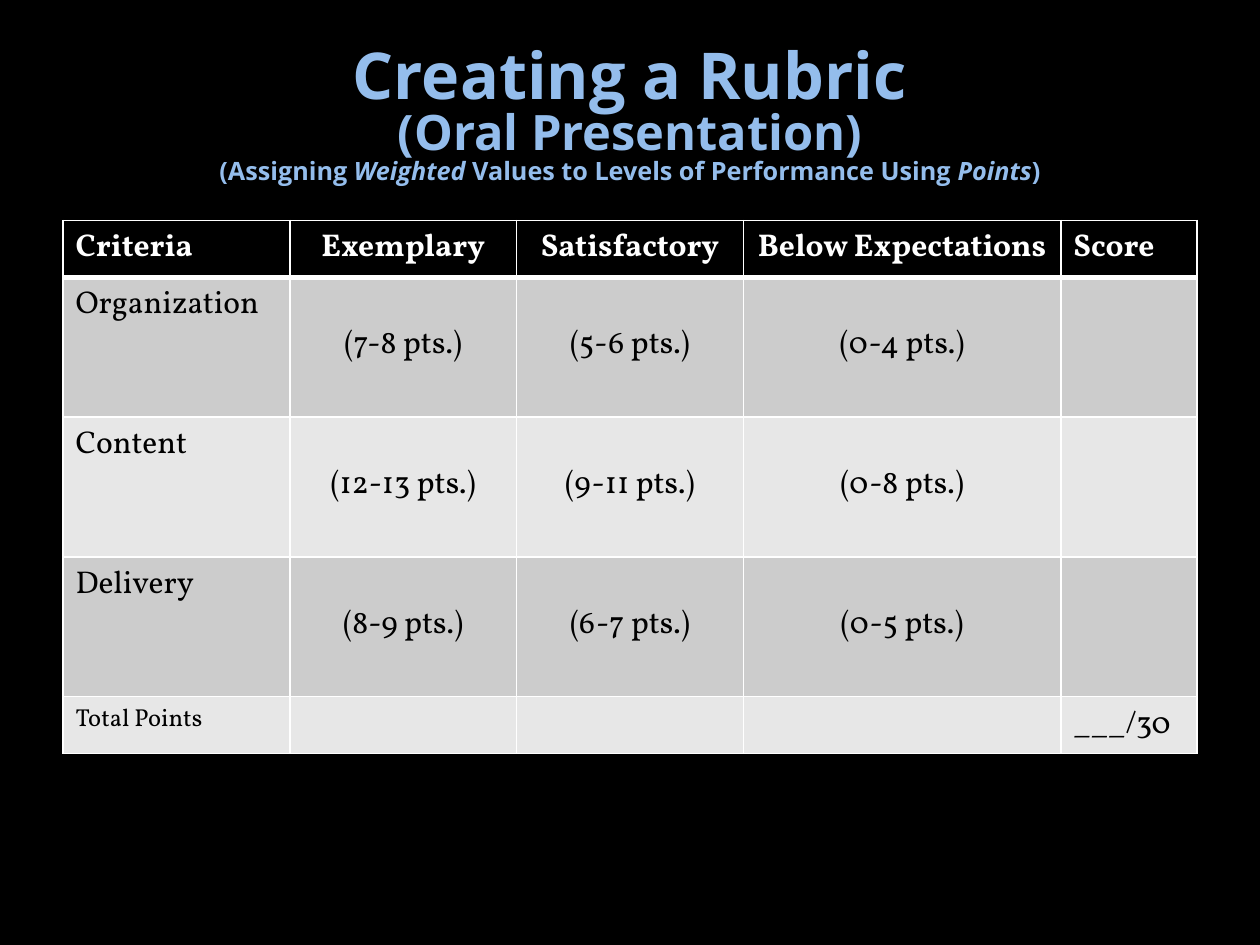
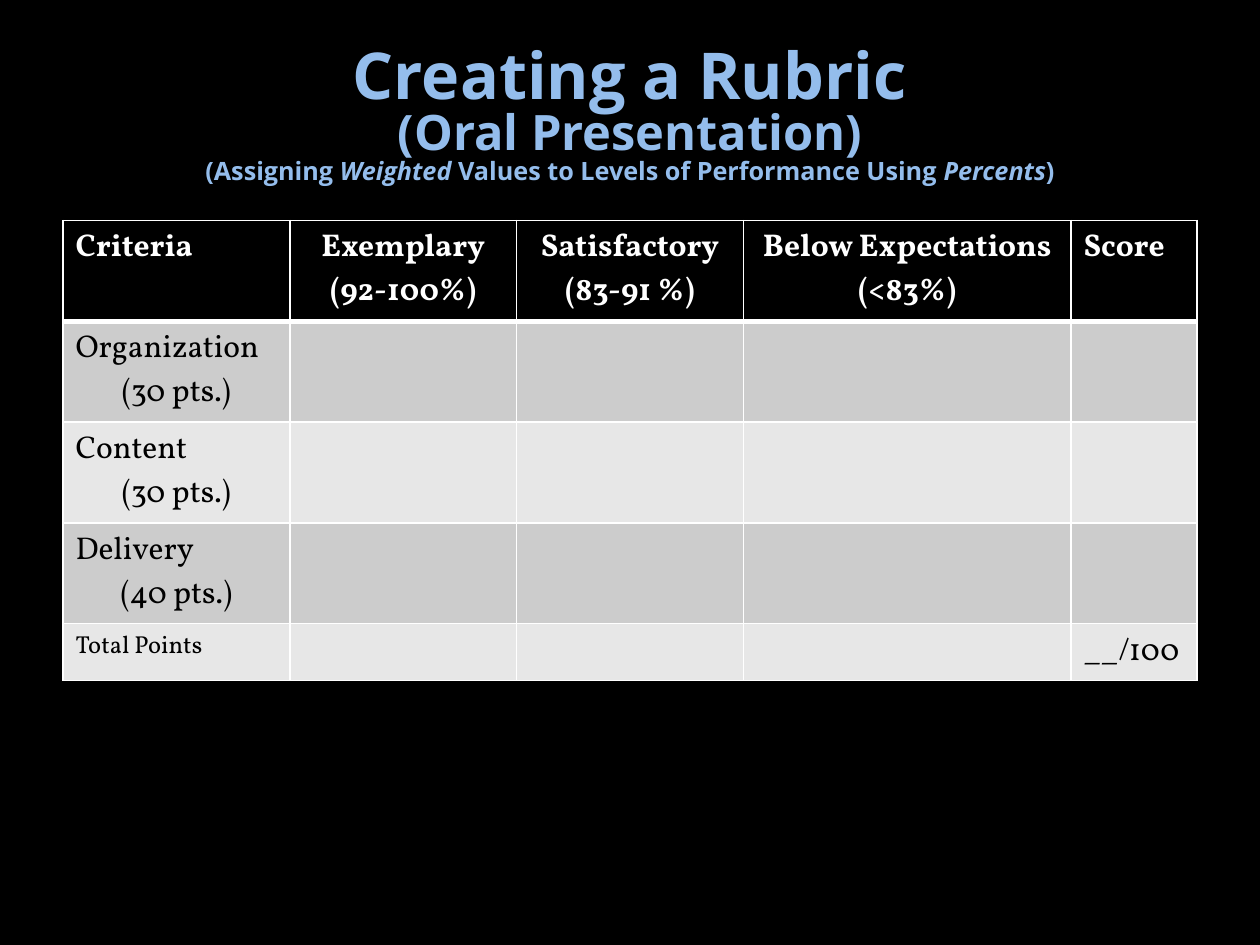
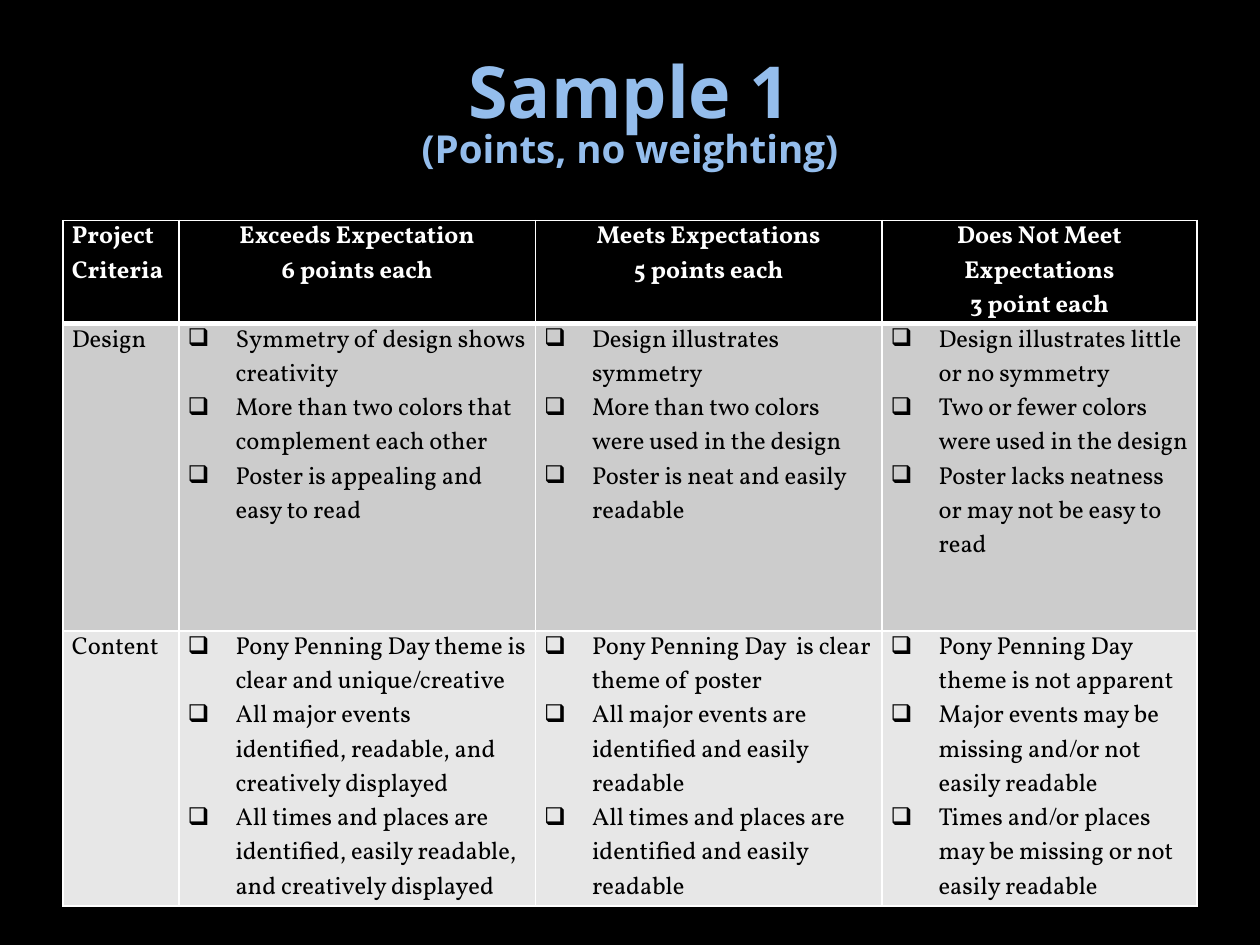
import pptx
import pptx.dml.color
import pptx.enum.text
import pptx.oxml
import pptx.oxml.ns
import pptx.util
import lxml.etree

Inches = pptx.util.Inches
Pt = pptx.util.Pt
RGBColor = pptx.dml.color.RGBColor
ALIGN = pptx.enum.text.PP_ALIGN
ANCHOR = pptx.enum.text.MSO_ANCHOR

BLACK = RGBColor(0x00, 0x00, 0x00)
WHITE = RGBColor(0xFF, 0xFF, 0xFF)
TITLE_BLUE = RGBColor(0x94, 0xBD, 0xEC)
BANDS = (RGBColor(0xCC, 0xCC, 0xCC), RGBColor(0xE7, 0xE7, 0xE7))

TITLE_BOX = (0.5, 0.3, 9, 1.25)
TABLE_BOX = (0.5, 1.75, 9)
TITLE_FONT = {"name": "Open Sans", "bold": True}
HEADER_FONT = {"name": "Vollkorn", "bold": True}
BODY_FONT = {"name": "Vollkorn", "bold": False}
TIGHT_MARGINS = {"margin_left": Inches(0.07), "margin_right": Inches(0.07),
                 "margin_top": 0, "margin_bottom": 0}
POINTS_MARGINS = {"margin_top": Inches(0.37)}

POINTS_ROWS = [
    ["Criteria", "Exemplary", "Satisfactory", "Below Expectations", "Score"],
    ["Organization", "(7-8 pts.)", "(5-6 pts.)", "(0-4 pts.)", ""],
    ["Content", "(12-13 pts.)", "(9-11 pts.)", "(0-8 pts.)", ""],
    ["Delivery", "(8-9 pts.)", "(6-7 pts.)", "(0-5 pts.)", ""],
    ["Total Points", "", "", "", "___/30"],
]
PERCENT_ROWS = [
    ["Criteria", "Exemplary\n(92-100%)", "Satisfactory\n(83-91 %)",
     "Below Expectations\n(<83%)", "Score"],
    ["Organization\n(30 pts.)", "", "", "", ""],
    ["Content\n(30 pts.)", "", "", "", ""],
    ["Delivery\n(40 pts.)", "", "", "", ""],
    ["Total Points", "", "", "", "__/100"],
]
SAMPLE_ROWS = [
    ["Project Criteria", "Exceeds Expectation\n6 points each",
     "Meets Expectations\n5 points each", "Does Not Meet Expectations\n3 point each"],
    ["Design",
     "Symmetry of design shows creativity\n"
     "More than two colors that complement each other\n"
     "Poster is appealing and easy to read",
     "Design illustrates symmetry\n"
     "More than two colors were used in the design\n"
     "Poster is neat and easily readable",
     "Design illustrates little or no symmetry\n"
     "Two or fewer colors were used in the design\n"
     "Poster lacks neatness or may not be easy to read"],
    ["Content",
     "Pony Penning Day theme is clear and unique/creative\n"
     "All major events identified, readable, and creatively displayed\n"
     "All times and places are identified, easily readable, and creatively displayed",
     "Pony Penning Day  is clear theme of poster\n"
     "All major events are identified and easily readable\n"
     "All times and places are identified and easily readable",
     "Pony Penning Day theme is not apparent\n"
     "Major events may be missing and/or not easily readable\n"
     "Times and/or places may be missing or not easily readable"],
]


def apply_format(target, values):
    """Set each attribute of the target from a dict."""
    for name, value in values.items():
        setattr(target, name, value)


def add_run(paragraph, text, font, size, color):
    """Add one formatted run to a paragraph."""
    run = paragraph.add_run()
    run.text = text
    apply_format(run.font, {**font, "size": Pt(size)})
    run.font.color.rgb = color


def add_title(slide, box, lines):
    """Place a centred title whose lines hold (text, size, italic) runs."""
    shape = slide.shapes.add_textbox(*map(Inches, box))
    apply_format(shape.text_frame, {"word_wrap": True, "vertical_anchor": ANCHOR.MIDDLE})
    paragraph = shape.text_frame.paragraphs[0]
    apply_format(paragraph, {"alignment": ALIGN.CENTER, "line_spacing": 0.83})
    for index, line in enumerate(lines):
        if index:
            paragraph.add_line_break()
        for text, size, italic in line:
            add_run(paragraph, text, {**TITLE_FONT, "italic": italic}, size, TITLE_BLUE)


def set_borders(cell, top, bottom):
    """Draw white borders, one point wide at the sides."""
    properties = cell._tc.get_or_add_tcPr()
    for side, width in zip("LRTB", (1, 1, top, bottom)):
        properties.append(pptx.oxml.parse_xml(
            f'<a:ln{side} {pptx.oxml.ns.nsdecls("a")} w="{Pt(width)}">'
            f'<a:solidFill><a:srgbClr val="{WHITE}"/></a:solidFill></a:ln{side}>'))


def add_checkbox(paragraph):
    """Give a paragraph a hanging checkbox bullet."""
    properties = paragraph._p.get_or_add_pPr()
    properties.set("marL", str(Inches(0.38)))
    properties.set("indent", str(Inches(-0.38)))
    bullet = lxml.etree.SubElement(properties, pptx.oxml.ns.qn("a:buChar"))
    bullet.set("char", "❑")


def fill_cell(cell, text, font, size, color, alignments, checkbox=False):
    """Write the lines of a cell, the first and the later ones aligned apart."""
    for index, line in enumerate(text.split("\n") if text else []):
        frame = cell.text_frame
        paragraph = frame.add_paragraph() if index else frame.paragraphs[0]
        paragraph.alignment = alignments[min(index, 1)]
        if checkbox:
            add_checkbox(paragraph)
        add_run(paragraph, line, font, size, color)


def add_rubric(slide, box, rows, widths, heights, size=18, margins=None,
               level_margins=None, checklist=False):
    """Place a rubric table with a black header and banded rows."""
    left, top, width = box
    table = slide.shapes.add_table(len(rows), len(widths), Inches(left), Inches(top),
                                   Inches(width), Inches(sum(heights))).table
    for column, column_width in zip(table.columns, widths):
        column.width = Inches(column_width)
    for row_index, (row, height) in enumerate(zip(rows, heights)):
        table.rows[row_index].height = Inches(height)
        header = row_index == 0
        for column_index, text in enumerate(row):
            cell = table.cell(row_index, column_index)
            level = column_index > 0 and text not in ("Score", rows[-1][-1])
            checkbox = checklist and not header and column_index > 0
            apply_format(cell, margins or {})
            if level and text and not header:
                apply_format(cell, level_margins or {})
            set_borders(cell, 3 if row_index == 1 else 1, 3 if header else 1)
            cell.fill.solid()
            cell.fill.fore_color.rgb = BLACK if header else BANDS[(row_index - 1) % 2]
            first = ALIGN.CENTER if level and not checkbox else ALIGN.LEFT
            later = ALIGN.LEFT if checkbox else ALIGN.CENTER
            fill_cell(cell, text, HEADER_FONT if header else BODY_FONT,
                      14 if text == "Total Points" else size,
                      WHITE if header else BLACK, (first, later), checkbox)


def weighted_title(unit):
    """Return the title lines of a weighted rubric in the given unit."""
    return [[("Creating a Rubric", 36.9, False)],
            [("(Oral Presentation)", 27.9, False)],
            [("(Assigning ", 14.4, False), ("Weighted", 14.4, True),
             (" Values to Levels of Performance Using ", 14.4, False),
             (unit, 14.4, True), (")", 14.4, False)]]


def add_rubric_slide(presentation, title, **rubric):
    """Add a black slide with a title above a rubric."""
    slide = presentation.slides.add_slide(presentation.slide_layouts[6])
    slide.background.fill.solid()
    slide.background.fill.fore_color.rgb = BLACK
    add_title(slide, TITLE_BOX, title)
    add_rubric(slide, TABLE_BOX, **rubric)


def main():
    """Build the three rubric slides."""
    presentation = pptx.Presentation()
    apply_format(presentation, {"slide_width": Inches(10), "slide_height": Inches(7.5)})
    add_rubric_slide(presentation, weighted_title("Points"), rows=POINTS_ROWS,
                     widths=[1.8, 1.8, 1.8, 2.52, 1.08],
                     heights=[0.45, 1.11, 1.11, 1.11, 0.45],
                     level_margins=POINTS_MARGINS)
    add_rubric_slide(presentation, weighted_title("Percents"), rows=PERCENT_ROWS,
                     widths=[1.8, 1.8, 1.8, 2.6, 1], heights=[0.8] * 4 + [0.45])
    add_rubric_slide(presentation, [[("Sample 1", 41, False)],
                                    [("(Points, no weighting)", 22, False)]],
                     rows=SAMPLE_ROWS, widths=[0.92, 2.83, 2.75, 2.5],
                     heights=[0.82, 2.44, 2.18], size=14, margins=TIGHT_MARGINS,
                     checklist=True)
    presentation.save("out.pptx")


if __name__ == "__main__":
    main()
